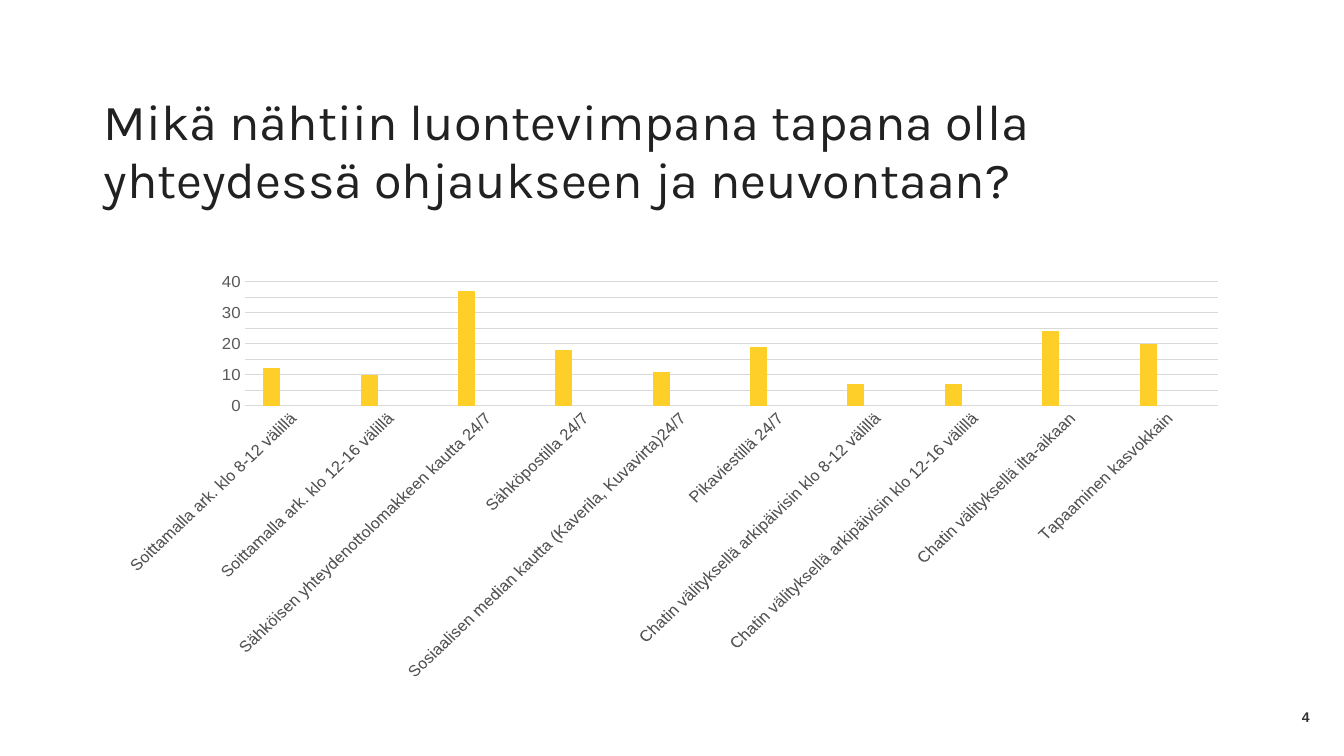
from pptx import Presentation
from pptx.chart.data import CategoryChartData
from pptx.dml.color import RGBColor as Rgb
from pptx.enum.chart import XL_CHART_TYPE as ChartType, XL_TICK_MARK as Tick
from pptx.enum.text import MSO_ANCHOR as Anchor, MSO_AUTO_SIZE as AutoSize, PP_ALIGN as Align
from pptx.util import Inches, Pt

COLORS = {
    "title": "212121",
    "axis": "595959",
    "grid": "D9D9D9",
    "number": "313131",
    "text": "000000",
    "series": ["FFCF29", "75A1FF", "868651"],
}

CONTACTS = {
    "Soittamalla ark. klo 8-12 välillä": 12,
    "Soittamalla ark. klo 12-16 välillä": 10,
    "Sähköisen yhteydenottolomakkeen kautta 24/7": 37,
    "Sähköpostilla 24/7": 18,
    "Sosiaalisen median kautta (Kaverila, Kuvavirta)24/7": 11,
    "Pikaviestillä 24/7": 19,
    "Chatin välityksellä arkipäivisin klo 8-12 välillä": 7,
    "Chatin välityksellä arkipäivisin klo 12-16 välillä": 7,
    "Chatin välityksellä ilta-aikaan": 24,
    "Tapaaminen kasvokkain": 20,
}


class SlideBuilder:
    """Holds the style and the current slide."""

    def __init__(self, deck):
        self.colors = COLORS
        self.page = deck.slides.add_slide(deck.slide_layouts[5])

    def style_font(self, font, size, color, name="Arial", bold=False):
        font.name = name
        font.size = Pt(size)
        font.bold = bold
        font.color.rgb = Rgb.from_string(self.colors[color])

    def style_line(self, line):
        line.color.rgb = Rgb.from_string(self.colors["grid"])
        line.width = Pt(0.75)

    def fill_box(self, box, area, text, align, anchor, **font):
        box.left, box.top, box.width, box.height = map(Inches, area)
        frame = box.text_frame
        frame.word_wrap = True
        frame.auto_size = AutoSize.NONE
        frame.vertical_anchor = anchor
        frame.margin_left = frame.margin_right = 0
        frame.margin_top = frame.margin_bottom = 0
        para = frame.paragraphs[0]
        para.alignment = align
        span = para.add_run()
        span.text = text
        self.style_font(span.font, **font)
        return para

    def add_title(self, area, text):
        para = self.fill_box(self.page.shapes.title, area, text, Align.LEFT, Anchor.TOP,
                             size=36, color="title", name="Karla")
        para.line_spacing = 0.95

    def add_page_number(self, area, text):
        box = self.page.shapes.add_textbox(*map(Inches, area))
        self.fill_box(box, area, text, Align.RIGHT, Anchor.MIDDLE,
                      size=10, color="number", bold=True)

    def add_column_chart(self, area, values):
        data = CategoryChartData()
        data.categories = list(values)
        data.add_series("Series 1", list(values.values()))
        for name in ("Series 2", "Series 3"):
            data.add_series(name, [None] * len(values))
        chart = self.page.shapes.add_chart(
            ChartType.COLUMN_CLUSTERED, *map(Inches, area), data).chart
        chart.has_legend = False
        chart.has_title = False
        self.style_font(chart.font, 10, "text")

        plot = chart.plots[0]
        plot.vary_by_categories = False
        plot.gap_width = 219
        plot.overlap = -27
        for series, color in zip(plot.series, self.colors["series"]):
            series.format.fill.solid()
            series.format.fill.fore_color.rgb = Rgb.from_string(color)

        for axis in (chart.category_axis, chart.value_axis):
            axis.major_tick_mark = axis.minor_tick_mark = Tick.NONE
            self.style_font(axis.tick_labels.font, 12, "axis")
        self.style_line(chart.category_axis.format.line)
        label_body = chart.category_axis._element.txPr.bodyPr
        label_body.set("rot", "-2700000")
        label_body.set("vert", "horz")

        scale = chart.value_axis
        scale.minimum_scale, scale.maximum_scale, scale.major_unit = 0, 40, 5
        scale.format.line.fill.background()
        scale.has_major_gridlines = True
        self.style_line(scale.major_gridlines.format.line)


def main():
    deck = Presentation()
    deck.slide_width, deck.slide_height = Inches(13.33), Inches(7.5)
    slide = SlideBuilder(deck)
    slide.add_title((1.03, 0.94, 11.28, 1.35),
                    "Mikä nähtiin luontevimpana tapana olla yhteydessä ohjaukseen ja neuvontaan?")
    slide.add_column_chart((1.03, 2.71, 11.28, 4.04), CONTACTS)
    slide.add_page_number((9.99, 6.91, 3, 0.4), "4")
    deck.save("out.pptx")


if __name__ == "__main__":
    main()
